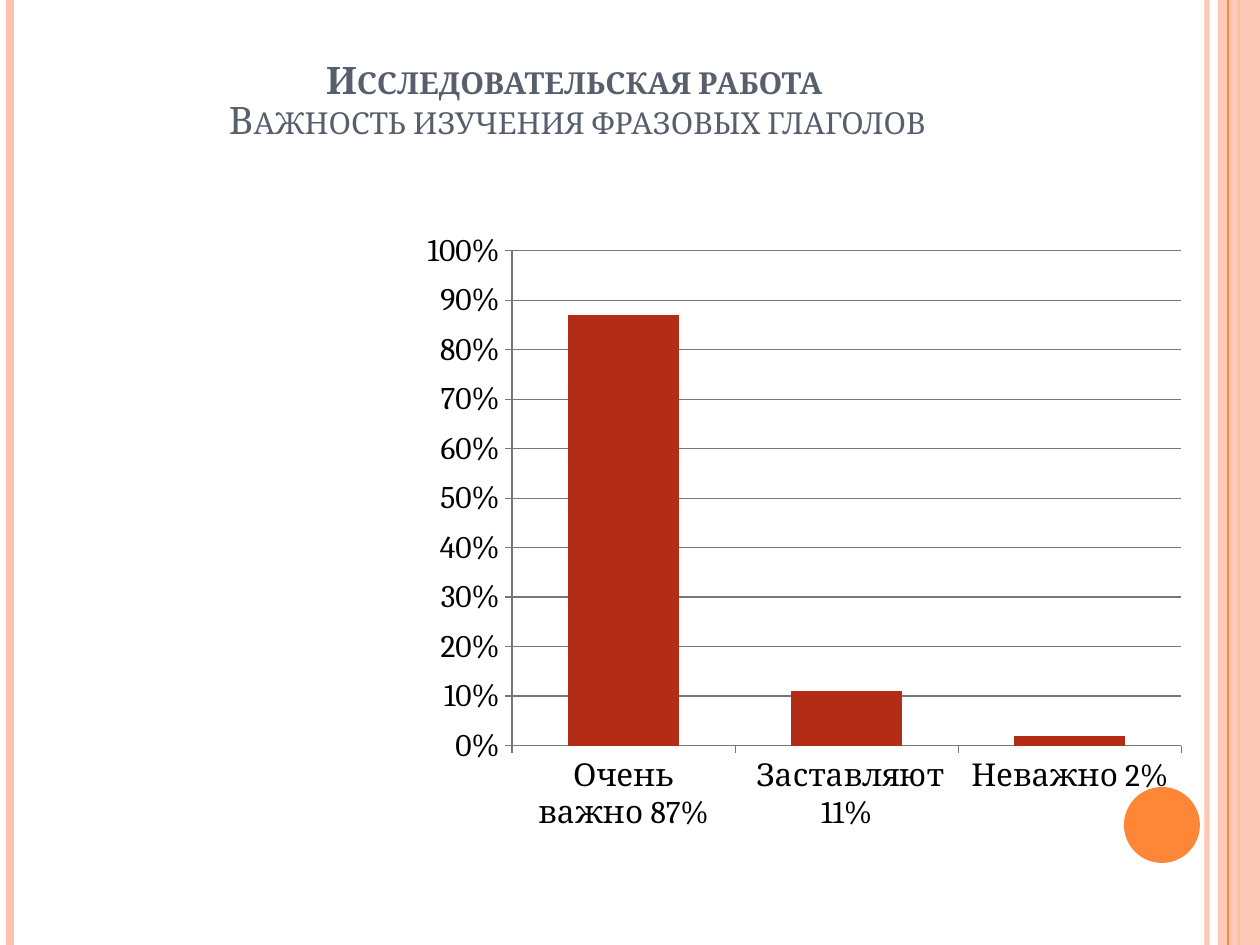
"""Build a slide with a column chart on the importance of studying phrasal verbs."""
import pptx
import pptx.chart.data
import pptx.dml.color
import pptx.enum.chart
import pptx.enum.shapes
import pptx.enum.text
import pptx.oxml.ns
import pptx.util
from lxml import etree

PX = 914400 // 126
PEACH = pptx.dml.color.RGBColor(0xFE, 0xC3, 0xAE)
ORANGE = pptx.dml.color.RGBColor(0xFE, 0x86, 0x37)
SLATE = pptx.dml.color.RGBColor(0x57, 0x5F, 0x6D)
BRICK = pptx.dml.color.RGBColor(0xB3, 0x2C, 0x16)
GREY = pptx.dml.color.RGBColor(0x77, 0x77, 0x77)
BLACK = pptx.dml.color.RGBColor(0, 0, 0)
FONT = "Cambria"
WIDTH, HEIGHT = 1260, 945


def set_alpha(shape, percent):
    color = next(shape._element.spPr.iter(pptx.oxml.ns.qn("a:srgbClr")))
    etree.SubElement(color, pptx.oxml.ns.qn("a:alpha"), val=str(percent * 1000))


def add_stripe(x, color, width):
    line = slide.shapes.add_connector(
        pptx.enum.shapes.MSO_CONNECTOR.STRAIGHT, x * PX, 0, x * PX, HEIGHT * PX)
    line.line.color.rgb = color
    line.line.width = pptx.util.Pt(width)
    etree.SubElement(line._element.spPr, pptx.oxml.ns.qn("a:effectLst"))
    return line


presentation = pptx.Presentation()
presentation.slide_width = pptx.util.Inches(10)
presentation.slide_height = pptx.util.Inches(7.5)
slide = presentation.slides.add_slide(presentation.slide_layouts[6])

set_alpha(add_stripe(1207, PEACH, 3), 93)
add_stripe(10, PEACH, 4.5)
add_stripe(1239, ORANGE, 1.5)

shape_type = pptx.enum.shapes.MSO_SHAPE
for kind, left, top, width, height, color, alpha in (
    (shape_type.RECTANGLE, 1218, 0, WIDTH - 1218, HEIGHT, PEACH, 87),
    (shape_type.OVAL, 1124, 787, 76, 76, ORANGE, 100),
):
    shape = slide.shapes.add_shape(kind, left * PX, top * PX, width * PX, height * PX)
    shape.shadow.inherit = False
    shape.fill.solid()
    shape.fill.fore_color.rgb = color
    shape.line.fill.background()
    if alpha < 100:
        set_alpha(shape, alpha)
    if kind == shape_type.RECTANGLE:
        add_stripe(1228, ORANGE, 0.75)

title = slide.shapes.add_textbox(63 * PX, 38 * PX, 1029 * PX, 107 * PX)
frame = title.text_frame
frame.word_wrap = True
frame.margin_bottom = 2 * PX
frame.vertical_anchor = pptx.enum.text.MSO_ANCHOR.BOTTOM
paragraph = frame.paragraphs[0]
paragraph.alignment = pptx.enum.text.PP_ALIGN.CENTER
paragraph.line_spacing = 0.9
for text, bold in (
    ("Исследовательская работа ", True),
    ("Важность изучения фразовых глаголов", False),
):
    if paragraph.runs:
        paragraph.add_line_break()
    run = paragraph.add_run()
    run.text = text
    run.font.name = FONT
    run.font.size = pptx.util.Pt(21.6)
    run.font.bold = bold
    run.font.color.rgb = SLATE
    run.font._element.set("cap", "small")

data = pptx.chart.data.CategoryChartData(number_format="0%")
data.categories = ["Очень важно 87%", " Заставляют 11%", "Неважно 2%"]
data.add_series("Series 1", (0.87, 0.11, 0.02))
chart = slide.shapes.add_chart(
    pptx.enum.chart.XL_CHART_TYPE.COLUMN_CLUSTERED,
    412 * PX, 220 * PX, 785 * PX, 624 * PX, data).chart
chart.has_legend = False
chart.has_title = False
chart.font.name = FONT
chart.font.size = pptx.util.Pt(18)
chart.font.color.rgb = BLACK
plot = chart.plots[0]
plot.gap_width = 100
plot.vary_by_categories = False
fill = plot.series[0].format.fill
fill.solid()
fill.fore_color.rgb = BRICK

value_axis = chart.value_axis
value_axis.minimum_scale = 0
value_axis.maximum_scale = 1
value_axis.major_unit = 0.1
value_axis.has_major_gridlines = True
value_axis.tick_labels.number_format = "0%"
value_axis.tick_labels.number_format_is_linked = False
for axis in (chart.category_axis, value_axis):
    axis.major_tick_mark = pptx.enum.chart.XL_TICK_MARK.OUTSIDE
    axis.minor_tick_mark = pptx.enum.chart.XL_TICK_MARK.NONE
for line_format in (
    chart.category_axis.format, value_axis.format, value_axis.major_gridlines.format,
):
    line_format.line.color.rgb = GREY
    line_format.line.width = pptx.util.Pt(0.75)

presentation.save("out.pptx")
